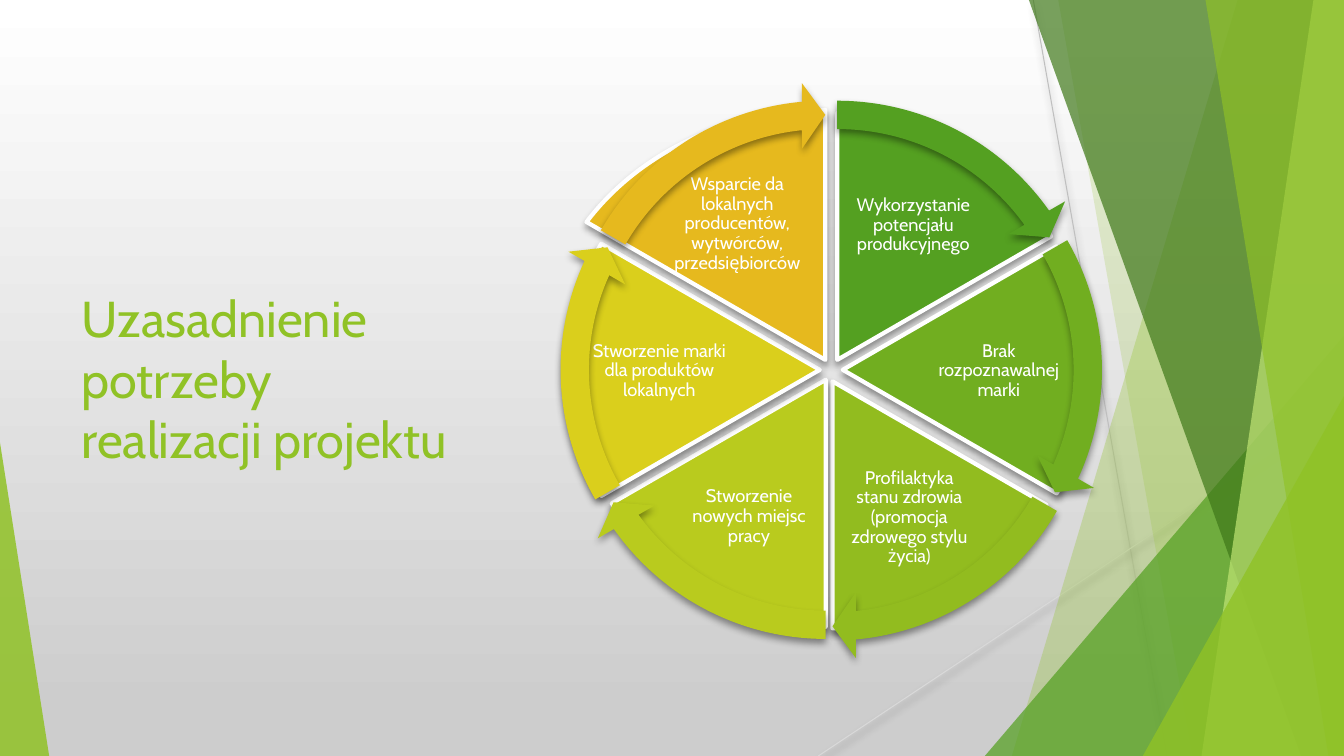
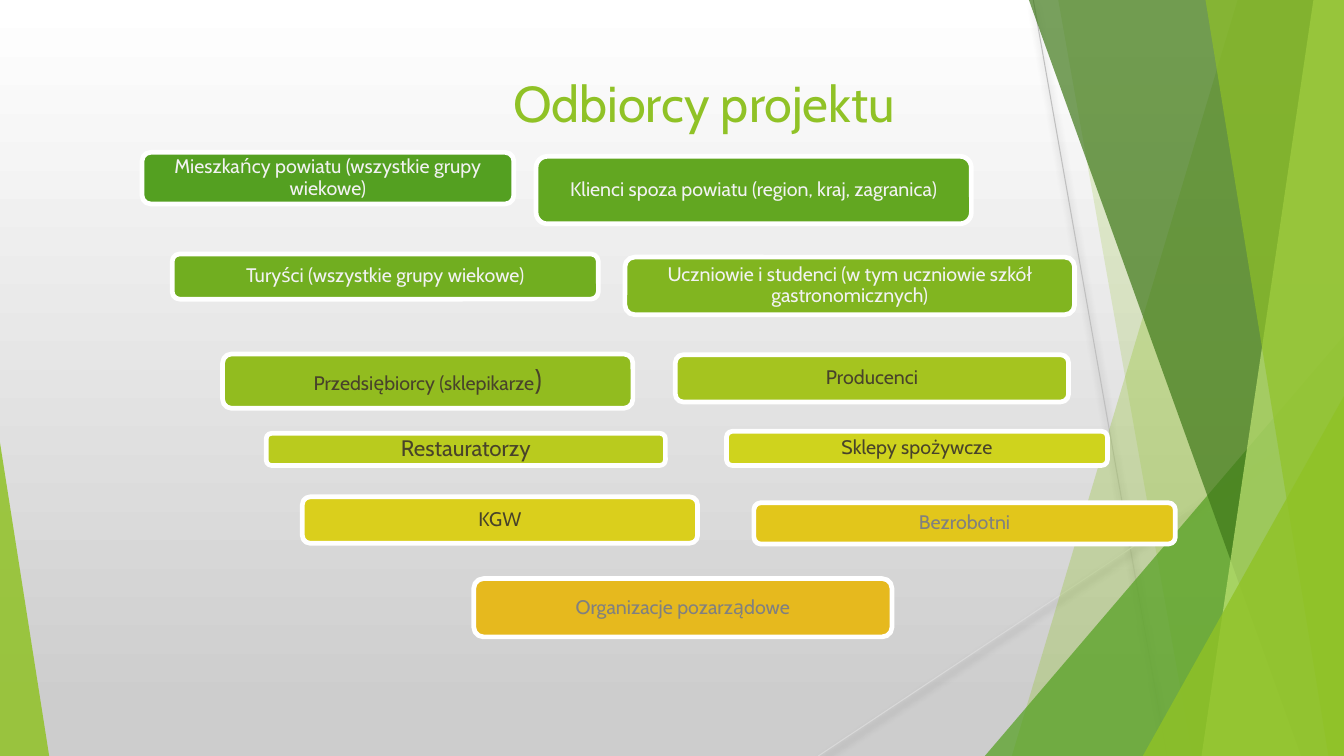
"""Build two slides about a local food project: its rationale and its audience."""
from dataclasses import dataclass

from lxml.etree import SubElement
from pptx import Presentation
from pptx.dml.color import RGBColor
from pptx.enum.shapes import MSO_CONNECTOR, MSO_SHAPE
from pptx.enum.text import MSO_ANCHOR, MSO_AUTO_SIZE, PP_ALIGN
from pptx.oxml.ns import qn
from pptx.util import Cm, Pt


@dataclass(frozen=True)
class Theme:
    font: str = "Cabin"
    lime: str = "90C226"
    green: str = "54A021"
    forest: str = "3F7819"
    pale_lime: str = "C0E474"
    white: str = "FFFFFF"
    silver: str = "CDCDCD"
    light_text: str = "F2F2F2"
    dark_text: str = "48432A"
    grey_text: str = "808080"
    ramp: tuple = ("54A021", "62A721", "71AE20", "81B520", "92BC1F", "A5C41F",
                   "B9CB1E", "CFD31D", "DACF1C", "E2C61B", "E6B91E")
    title_size: float = 36
    wheel_size: float = 13
    box_size: float = 14
    large_box_size: float = 16
    bracket_size: float = 20


T = Theme()
WIDTH, HEIGHT = 33.87, 19.05

RAYS = [
    (26.04, 0, 29.41, HEIGHT, "BFBFBF"),
    (WIDTH, 10.24, 20.62, HEIGHT, "D9D9D9"),
]
FACETS = [
    ("band", (31.19, 25.5), T.lime, 30),
    ("band", (26.67, 30.05), T.lime, 20),
    ("right", (24.82, 8.46), T.green, 72),
    ("band", (25.93, 32.79), T.forest, 70),
    ("band", (33.1, 30.28), T.pale_lime, 70),
    ("band", (30.38, 33.48), T.lime, 65),
    ("right", (28.8, 9.98), T.lime, 80),
    ("left", (1.24, 11.15), T.lime, 85),
]

REASONS_TITLE = "Uzasadnienie potrzeby realizacji projektu"
REASONS = [
    ("Wykorzystanie potencjału produkcyjnego",
     (21.1, 9.07), (12.45, 12.45), (21.39, 4.42, 3.25, 2.51)),
    ("Brak rozpoznawalnej marki",
     (21.24, 9.32), (12.45, 12.45), (23.47, 8.13, 3.4, 2.44)),
    ("Profilaktyka stanu zdrowia (promocja zdrowego stylu życia)",
     (20.98, 9.61), (12.45, 12.45), (21.29, 11.79, 3.25, 2.51)),
    ("Stworzenie nowych miejsc pracy",
     (20.81, 9.57), (12.45, 12.45), (17.25, 11.76, 3.25, 2.51)),
    ("Stworzenie marki dla produktów lokalnych",
     (20.66, 9.32), (12.8, 12.45), (14.86, 8.13, 3.51, 2.44)),
    ("Wsparcie da lokalnych producentów, wytwórców, przedsiębiorców",
     (20.8, 9.07), (14.43, 12.6), (16.69, 4.37, 3.78, 2.54)),
]
ARROW_SIZE = 14
FULL_TURN, TOP, ARROW_SWEEP = 216, 162, 32.72

AUDIENCE_TITLE = "Odbiorcy projektu"
AUDIENCE = [
    ("Mieszkańcy powiatu (wszystkie grupy wiekowe)",
     (3.58, 3.84, 9.37, 1.3), T.light_text),
    ("Klienci spoza powiatu (region, kraj, zagranica)",
     (13.51, 3.94, 10.97, 1.7), T.light_text),
    ("Turyści (wszystkie grupy wiekowe)",
     (4.34, 6.4, 10.74, 1.14), T.light_text),
    ("Uczniowie i studenci (w tym uczniowie szkół gastronomicznych)",
     (15.75, 6.48, 11.33, 1.45), T.light_text),
    ("Przedsiębiorcy (sklepikarze", (5.61, 8.92, 10.34, 1.37), T.dark_text),
    ("Producenci", (17.02, 8.94, 9.91, 1.19), T.dark_text),
    ("Restauratorzy", (6.71, 10.92, 10.06, 0.81), T.dark_text),
    ("Sklepy spożywcze", (18.31, 10.87, 9.6, 0.86), T.dark_text),
    ("KGW", (7.62, 12.52, 9.96, 1.17), T.dark_text),
    ("Bezrobotni", (19, 12.67, 10.62, 1.04), T.grey_text),
    ("Organizacje pozarządowe", (11.94, 14.58, 10.54, 1.47), T.grey_text),
]
LARGE_BOX = "Restauratorzy"
BRACKETS = {"Przedsiębiorcy (sklepikarze": ")"}


def rgb(value):
    return RGBColor.from_string(value)


def cms(values):
    return [Cm(v) for v in values]


def around(centre, size):
    return [c - s / 2 for c, s in zip(centre, size)] + list(size)


def cast_shadow(effects):
    shadow = SubElement(effects, qn("a:outerShdw"), blurRad=str(Pt(5.2)),
                        dist=str(Pt(3)), dir="5400000", rotWithShape="0")
    color = SubElement(shadow, qn("a:srgbClr"), val="000000")
    SubElement(color, qn("a:alpha"), val="40000")


def paint(sp, color, line_width=None, alpha=None, shadow=False):
    sp.fill.solid()
    sp.fill.fore_color.rgb = rgb(color)
    if line_width:
        sp.line.color.rgb = rgb(T.white)
        sp.line.width = Pt(line_width)
    else:
        sp.line.fill.background()
    if alpha:
        fill = sp.element.spPr.find(qn("a:solidFill"))
        SubElement(fill[0], qn("a:alpha"), val=str(alpha * 1000))
    sp.shadow.inherit = False
    if shadow:
        cast_shadow(sp.element.spPr.find(qn("a:effectLst")))


def add_preset(slide, kind, box, adjustments=()):
    sp = slide.shapes.add_shape(kind, *cms(box))
    for i, value in enumerate(adjustments):
        sp.adjustments[i] = value
    return sp


def style_run(r, size, color):
    r.font.name = T.font
    r.font.size = Pt(size)
    r.font.color.rgb = rgb(color)


def write_label(sp, text, size, color, side, edge):
    tf = sp.text_frame
    tf.word_wrap = True
    tf.vertical_anchor = MSO_ANCHOR.MIDDLE
    tf.margin_left = tf.margin_right = Cm(side)
    tf.margin_top = tf.margin_bottom = Cm(edge)
    p = tf.paragraphs[0]
    p.text = text
    p.alignment = PP_ALIGN.CENTER
    p.line_spacing = 0.9
    style_run(p.runs[0], size, color)
    return p


def set_title(slide, text, box, anchor, alignment):
    sp = slide.shapes.title
    sp.left, sp.top, sp.width, sp.height = cms(box)
    tf = sp.text_frame
    tf.text = text
    tf.word_wrap = True
    tf.auto_size = MSO_AUTO_SIZE.NONE
    tf.vertical_anchor = anchor
    p = tf.paragraphs[0]
    p.alignment = alignment
    style_run(p.runs[0], T.title_size, T.lime)


def add_ray(slide, x1, y1, x2, y2, color):
    line = slide.shapes.add_connector(MSO_CONNECTOR.STRAIGHT, *cms((x1, y1, x2, y2)))
    line.line.color.rgb = rgb(color)
    line.line.width = Pt(0.75)
    cast_shadow(SubElement(line.element.spPr, qn("a:effectLst")))
    return line


def add_facet(slide, kind, place, color, alpha):
    x, y = place
    if kind == "band":
        top, bottom = place
        builder = slide.shapes.build_freeform(Cm(top), 0)
        corners = [(WIDTH, 0), (WIDTH, HEIGHT), (bottom, HEIGHT)]
        builder.add_line_segments([cms(c) for c in corners], close=True)
        sp = builder.convert_to_shape()
    elif kind == "right":
        sp = add_preset(slide, MSO_SHAPE.ISOSCELES_TRIANGLE,
                        (x, y, WIDTH - x, HEIGHT - y), [1])
    else:
        sp = add_preset(slide, MSO_SHAPE.ISOSCELES_TRIANGLE,
                        (0, y, x, HEIGHT - y), [0])
    paint(sp, color, alpha=alpha)
    return sp


def decorate_master(master, slide):
    fill = master.background.fill
    fill.gradient()
    fill.gradient_angle = 270
    for stop, position, color in zip(fill.gradient_stops, (0, 0.94), (T.white, T.silver)):
        stop.position = position
        stop.color.rgb = rgb(color)
    parts = [add_ray(slide, *ray) for ray in RAYS]
    parts += [add_facet(slide, *facet) for facet in FACETS]
    tree = master.shapes.element
    for i, sp in enumerate(parts):
        sp.element.xpath(".//p:cNvPr")[0].set("id", str(100 + i))
        tree.insert(2 + i, sp.element)


def build_reasons(slide):
    set_title(slide, REASONS_TITLE, (1.8, 3.84, 9.86, 11.38),
              MSO_ANCHOR.MIDDLE, PP_ALIGN.LEFT)
    step = FULL_TURN / len(REASONS)
    starts = [(TOP + i * step) % FULL_TURN for i in range(len(REASONS))]
    colors = T.ramp[::2]
    for (text, centre, size, label), start, color in zip(REASONS, starts, colors):
        end = (start + step) % FULL_TURN
        pie = add_preset(slide, MSO_SHAPE.PIE, around(centre, size), (start, end))
        paint(pie, color, line_width=3, shadow=True)
        tb = slide.shapes.add_textbox(*cms(label))
        write_label(tb, text, T.wheel_size, T.white, 0.05, 0.05)
    for (_, centre, _, _), start, color in zip(REASONS, starts, colors):
        tip = (start + ARROW_SWEEP) % FULL_TURN
        arrow = add_preset(slide, MSO_SHAPE.CIRCULAR_ARROW,
                           around(centre, (ARROW_SIZE, ARROW_SIZE)),
                           (0.051, 3.275, tip, start, 0.059))
        paint(arrow, color, shadow=True)


def build_audience(slide):
    set_title(slide, AUDIENCE_TITLE, (3.58, 1.7, 28.32, 3.05),
              MSO_ANCHOR.TOP, PP_ALIGN.CENTER)
    for (text, box, text_color), color in zip(AUDIENCE, T.ramp):
        sp = add_preset(slide, MSO_SHAPE.ROUNDED_RECTANGLE, box)
        paint(sp, color, line_width=3.35)
        size = T.large_box_size if text == LARGE_BOX else T.box_size
        p = write_label(sp, text, size, text_color, 0.15, 0)
        if text in BRACKETS:
            r = p.add_run()
            r.text = BRACKETS[text]
            style_run(r, T.bracket_size, text_color)


def main():
    prs = Presentation()
    prs.slide_width, prs.slide_height = cms((WIDTH, HEIGHT))
    title_only = prs.slide_layouts[5]
    reasons = prs.slides.add_slide(title_only)
    audience = prs.slides.add_slide(title_only)
    decorate_master(prs.slide_master, reasons)
    build_reasons(reasons)
    build_audience(audience)
    prs.save("out.pptx")


if __name__ == "__main__":
    main()
